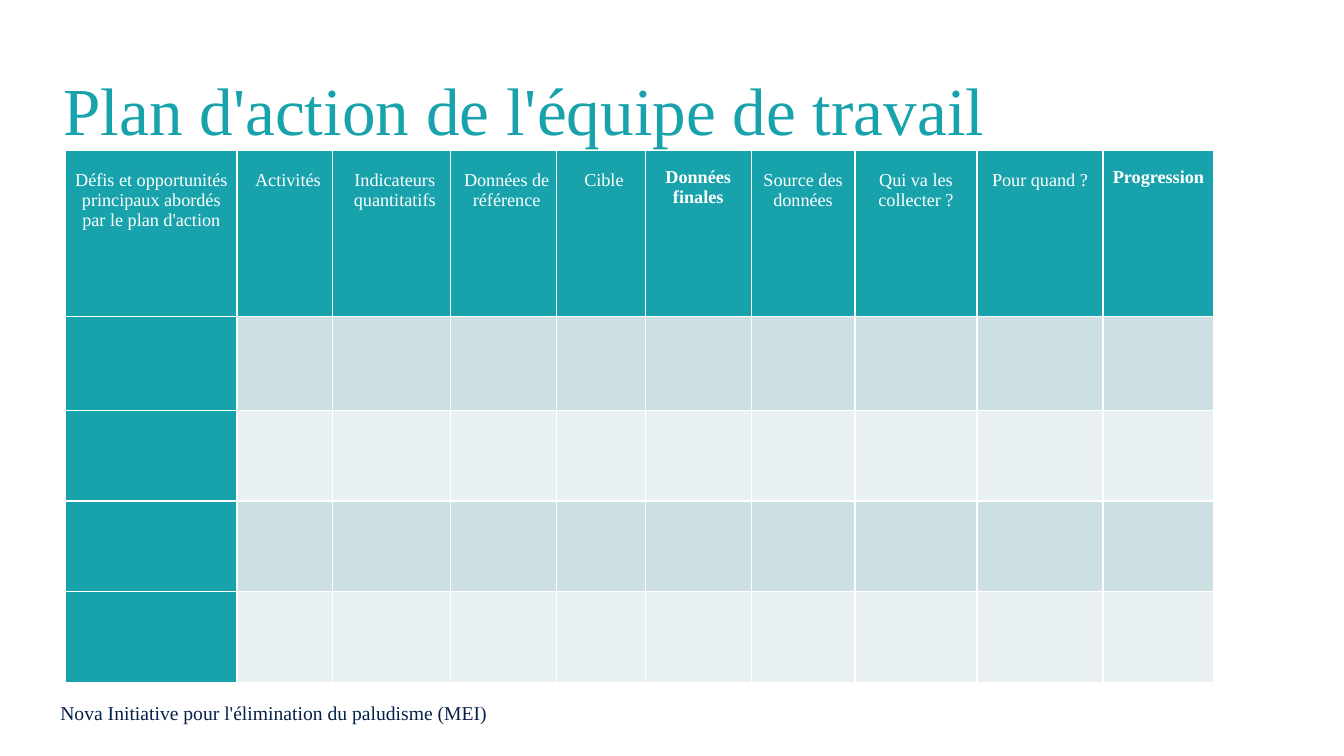
from lxml import etree
from pptx import Presentation
from pptx import util as u
from pptx.dml.color import RGBColor
from pptx.enum import text
from pptx.oxml import ns

TEAL = RGBColor(0x18, 0xA3, 0xAC)
NAVY = RGBColor(0x05, 0x20, 0x49)
WHITE = RGBColor(0xFF, 0xFF, 0xFF)
BANDS = RGBColor(0xCC, 0xE0, 0xE3), RGBColor(0xE8, 0xF0, 0xF1)

COLUMNS = [
    ("Défis et opportunités principaux abordés par le plan d'action", 1.7),
    ("Activités", 0.95),
    ("Indicateurs quantitatifs", 1.17),
    ("Données de référence", 1.05),
    ("Cible", 0.88),
    ("Données finales", 1.05),
    ("Source des données", 1.03),
    ("Qui va les collecter ?", 1.21),
    ("Pour quand ?", 1.25),
    ("Progression", 1.1),
]
ROW_HEIGHTS = [1.65, 0.93, 0.9, 0.9, 0.9]
BOLD_HEADERS = {"Données finales", "Progression"}
SHIFTED_HEADERS = {"Activités", "Indicateurs quantitatifs", "Données de référence", "Cible"}


class SlideBuilder:
    font = "Times New Roman"

    def __init__(self, deck):
        self.page = deck.slides.add_slide(deck.slide_layouts[5])

    def set_words(self, frame, words, size, color, align=text.PP_ALIGN.LEFT, bold=False):
        frame.text = words
        frame.word_wrap = True
        para = frame.paragraphs[0]
        para.alignment = align
        span = para.runs[0]
        span.font.name = self.font
        span.font.size = u.Pt(size)
        span.font.bold = bold
        span.font.color.rgb = color

    def title(self, words, left, top, width, height):
        box = self.page.shapes.title
        box.left, box.top = u.Inches(left), u.Inches(top)
        box.width, box.height = u.Inches(width), u.Inches(height)
        self.set_words(box.text_frame, words, 48, TEAL)
        box.text_frame.vertical_anchor = text.MSO_ANCHOR.MIDDLE
        box.text_frame.paragraphs[0].line_spacing = 0.9

    def label(self, words, left, top, width, height):
        box = self.page.shapes.add_textbox(
            u.Inches(left), u.Inches(top), u.Inches(width), u.Inches(height))
        self.set_words(box.text_frame, words, 14, NAVY)

    def borders(self, cell):
        properties = cell._tc.get_or_add_tcPr()
        for position, tag in enumerate(("a:lnL", "a:lnR", "a:lnT", "a:lnB")):
            line = etree.Element(ns.qn(tag), w=str(u.Pt(1)))
            fill = etree.SubElement(line, ns.qn("a:solidFill"))
            etree.SubElement(fill, ns.qn("a:srgbClr"), val=str(WHITE))
            properties.insert(position, line)

    def header(self, cell, words):
        bold = words in BOLD_HEADERS
        shift = 0.03 if words in SHIFTED_HEADERS else 0
        cell.margin_left = u.Inches(0.07 + shift)
        cell.margin_right = u.Inches(0.07 - shift)
        cell.margin_top = u.Inches(0.17 if bold else 0.2)
        cell.margin_bottom = 0
        self.set_words(cell.text_frame, words, 13, WHITE, text.PP_ALIGN.CENTER, bold)

    def table(self, left, top):
        widths = [width for _, width in COLUMNS]
        grid = self.page.shapes.add_table(
            len(ROW_HEIGHTS), len(COLUMNS), u.Inches(left), u.Inches(top),
            u.Inches(sum(widths)), u.Inches(sum(ROW_HEIGHTS))).table
        grid.first_row = grid.horz_banding = False
        for column, width in zip(grid.columns, widths):
            column.width = u.Inches(width)
        for index, (row, height) in enumerate(zip(grid.rows, ROW_HEIGHTS)):
            row.height = u.Inches(height)
            for position, cell in enumerate(row.cells):
                edge = index == 0 or position == 0
                cell.fill.solid()
                cell.fill.fore_color.rgb = TEAL if edge else BANDS[(index - 1) % 2]
                self.borders(cell)
                if index == 0:
                    self.header(cell, COLUMNS[position][0])


def main():
    deck = Presentation()
    deck.slide_width, deck.slide_height = u.Inches(13.33), u.Inches(7.5)
    builder = SlideBuilder(deck)
    builder.label("Nova Initiative pour l'élimination du paludisme (MEI)", 0.5, 6.9, 5.31, 0.34)
    builder.title("Plan d'action de l'équipe de travail", 0.53, 0.4, 12.45, 1.45)
    builder.table(0.65, 1.49)
    deck.save("out.pptx")


if __name__ == "__main__":
    main()
